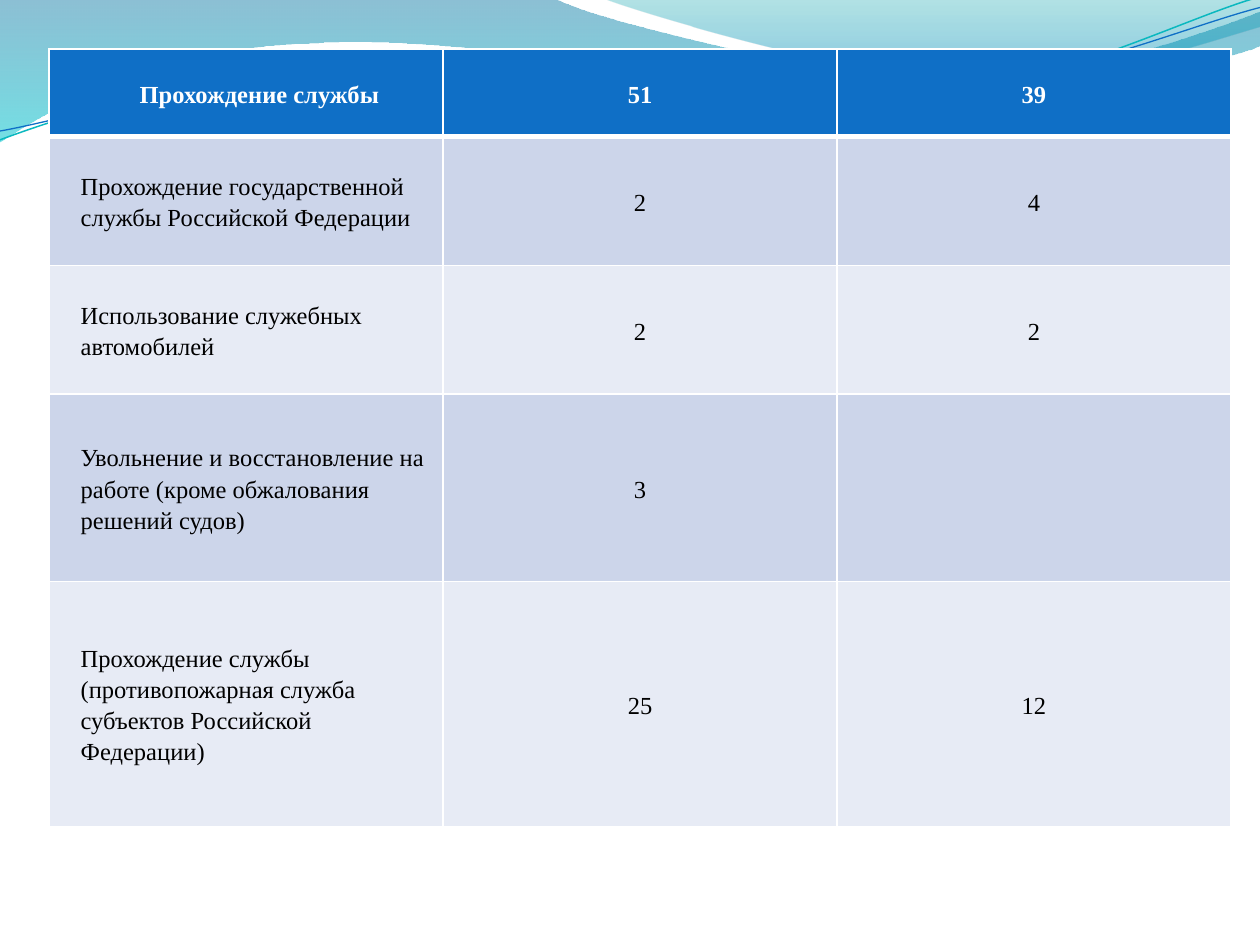
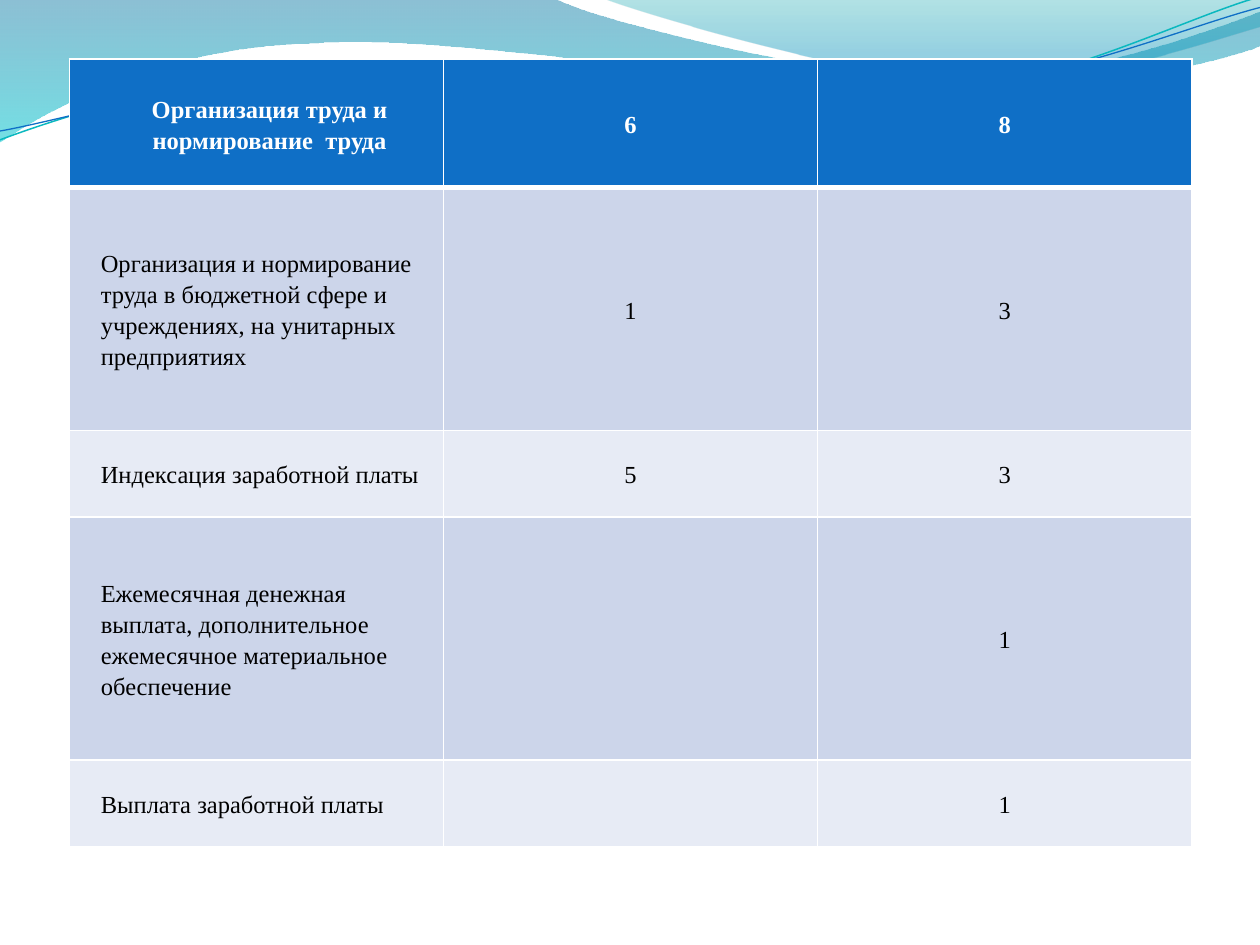
from math import cos, radians, sin

from lxml import etree
from pptx import Presentation
from pptx.dml.color import RGBColor
from pptx.enum.text import MSO_ANCHOR, PP_ALIGN
from pptx.oxml.ns import qn
from pptx.util import Inches, Pt

MIDDLE, CENTER, LEFT = MSO_ANCHOR.MIDDLE, PP_ALIGN.CENTER, PP_ALIGN.LEFT

# Content: place of each table (inches), relative row heights and rows, header row first
TABLES = [
    dict(left=0.39, top=0.39, width=9.38, height=6.17,
         shares=[0.69, 1.02, 1.02, 1.48, 1.94], rows=[
             ("Прохождение службы", "51", "39"),
             ("Прохождение государственной службы Российской Федерации", "2", "4"),
             ("Использование служебных автомобилей", "2", "2"),
             ("Увольнение и восстановление на работе (кроме обжалования решений судов)",
              "3", ""),
             ("Прохождение службы (противопожарная служба субъектов Российской Федерации)",
              "25", "12"),
         ]),
    dict(left=0.55, top=0.47, width=8.91, height=6.25,
         shares=[1.02, 1.93, 0.69, 1.93, 0.69], rows=[
             ("Организация труда и нормирование  труда", "6", "8"),
             ("Организация и нормирование труда в бюджетной сфере и учреждениях, "
              "на унитарных предприятиях", "1", "3"),
             ("Индексация заработной платы", "5", "3"),
             ("Ежемесячная денежная выплата, дополнительное  ежемесячное материальное "
              "обеспечение", "", "1"),
             ("Выплата заработной платы", "", "1"),
         ]),
]

# Shared style
FONT, FONT_SIZE, LINE_SPACING = "Times New Roman", 14, 1.15
WHITE, BLACK, HEADER = "FFFFFF", "000000", "0F6FC6"
BANDS = ["E7EBF5", "CCD5EA"]
MARGIN, LABEL_INDENT = 0.04, 0.25
THIN, THICK = 1, 3

# Waves: start point, then line ends (2 numbers) or cubic curves (6 numbers), inches;
# gradient stops are position, colour, opacity in percent
TILT = 357.3
WAVES = [
    dict(outline=[(0, 0), (4.4, -0.01), (4.76, 0.17, 6.64, 0.63, 7.58, 0.63),
                  (8.53, 0.63, 9.58, 0.26, 10, 0.09), (10.01, 0.36),
                  (9.83, 0.44, 8.7, 0.76, 7.46, 0.75),
                  (6.22, 0.75, 3.82, 0.28, 2.57, 0.34),
                  (1.29, 0.36, 0.46, 0.83, -0.01, 1.13), (0, 0)],
         gradient=[(0, "0074A1", 45), (1, "00C6CF", 55)]),
    dict(outline=[(4.79, -0.01), (5.09, 0.11, 6.82, 0.62, 7.69, 0.65),
                  (8.56, 0.69, 9.61, 0.32, 10, 0.21), (10, 0), (4.79, -0.01)],
         gradient=[(0, "00A1A9", 30), (0.8, "008BBF", 45)]),
    dict(outline=[(0, 1.11), (0.48, 0.93, 1.58, 0.57, 2.77, 0.52),
                  (3.95, 0.47, 5.93, 0.89, 7.13, 0.8),
                  (8.33, 0.71, 9.38, 0.15, 9.98, -0.02)],
         line=("0AB8BF", 0.85), pivot=(4.99, 0.58)),
    dict(outline=[(0, 1.04), (0.47, 0.96, 1.64, 0.61, 2.83, 0.56),
                  (4.03, 0.51, 5.97, 0.84, 7.17, 0.75),
                  (8.36, 0.67, 9.41, 0.21, 10, 0.06)],
         line=("0F6FC6", 0.75), pivot=(5, 0.59)),
]
FIRST_WAVE_ID = 101


def color(hex_string):
    return RGBColor.from_string(hex_string)


def untilt(point, pivot):
    """Where a point lies before the shape is turned by TILT about the pivot."""
    angle = radians(-TILT)
    dx, dy = point[0] - pivot[0], point[1] - pivot[1]
    return (pivot[0] + dx * cos(angle) - dy * sin(angle),
            pivot[1] + dx * sin(angle) + dy * cos(angle))


def bend(wave, outline):
    """Join the three points of each curve into one Bezier segment."""
    segments = iter(list(wave._element.iter(qn("a:lnTo"))))
    for step in outline[1:]:
        segment = next(segments)
        if len(step) == 6:
            segment.tag = qn("a:cubicBezTo")
            for extra in (next(segments), next(segments)):
                segment.append(extra[0])
                extra.getparent().remove(extra)


def add_wave(slide, outline, gradient=None, line=None, pivot=None):
    points = [step[i:i + 2] for step in outline for i in range(0, len(step), 2)]
    if pivot:
        points = [untilt(point, pivot) for point in points]
    start, *rest = [(Inches(x), Inches(y)) for x, y in points]
    builder = slide.shapes.build_freeform(*start)
    builder.add_line_segments(rest, close=gradient is not None)
    wave = builder.convert_to_shape()
    bend(wave, outline)
    wave.shadow.inherit = False
    if line:
        wave.rotation = TILT
        wave.fill.background()
        wave.line.color.rgb = color(line[0])
        wave.line.width = Pt(line[1])
        return wave
    wave.line.fill.background()
    wave.fill.gradient()
    wave.fill.gradient_angle = 270
    for stop, (position, tint, _) in zip(wave.fill.gradient_stops, gradient):
        stop.position = position
        stop.color.rgb = color(tint)
    for tint, (*_, opacity) in zip(wave._element.iter(qn("a:srgbClr")), gradient):
        etree.SubElement(tint, qn("a:alpha"), val=str(opacity * 1000))
    return wave


def add_waves_to_master(deck, slide):
    """Draw the waves once and move them to the master that all slides share."""
    for number, parts in enumerate(WAVES, FIRST_WAVE_ID):
        element = add_wave(slide, **parts)._element
        next(element.iter(qn("p:cNvPr"))).set("id", str(number))
        deck.slide_master.shapes._spTree.append(element)


def add_borders(cell, widths):
    """Border widths in points for the left, right, top and bottom edges."""
    properties = cell._tc.get_or_add_tcPr()
    for place, (edge, width) in enumerate(zip("LRTB", widths)):
        border = etree.Element(qn(f"a:ln{edge}"), w=str(Pt(width)))
        fill = etree.SubElement(border, qn("a:solidFill"))
        etree.SubElement(fill, qn("a:srgbClr"), val=WHITE)
        properties.insert(place, border)


def format_cell(cell, text, row, column):
    is_header, is_label = row == 0, column == 0
    cell.fill.solid()
    cell.fill.fore_color.rgb = color(HEADER if is_header else BANDS[row % 2])
    add_borders(cell, (THIN, THIN, THICK if row == 1 else THIN,
                       THICK if is_header else THIN))
    if not text:
        return
    cell.vertical_anchor = MIDDLE
    cell.margin_left = Inches(LABEL_INDENT if is_label else MARGIN)
    cell.margin_right = cell.margin_top = cell.margin_bottom = Inches(MARGIN)
    paragraph = cell.text_frame.paragraphs[0]
    paragraph.text = text
    paragraph.alignment = LEFT if is_label and not is_header else CENTER
    paragraph.line_spacing = LINE_SPACING
    font = paragraph.runs[0].font
    font.name, font.size, font.bold = FONT, Pt(FONT_SIZE), is_header
    font.color.rgb = color(WHITE if is_header else BLACK)


def add_statistics(slide, left, top, width, height, shares, rows):
    columns = len(rows[0])
    table = slide.shapes.add_table(len(rows), columns, Inches(left), Inches(top),
                                   Inches(width), Inches(height)).table
    table.first_row = table.horz_banding = False
    for column in table.columns:
        column.width = Inches(width / columns)
    for r, (share, texts) in enumerate(zip(shares, rows)):
        table.rows[r].height = Inches(height * share / sum(shares))
        for c, text in enumerate(texts):
            format_cell(table.cell(r, c), text, r, c)


def main():
    deck = Presentation()
    deck.slide_width, deck.slide_height = Inches(10), Inches(7.5)
    blank = deck.slide_layouts[6]
    slides = [deck.slides.add_slide(blank) for _ in TABLES]
    add_waves_to_master(deck, slides[0])
    for slide, statistics in zip(slides, TABLES):
        add_statistics(slide, **statistics)
    deck.save("out.pptx")


if __name__ == "__main__":
    main()
